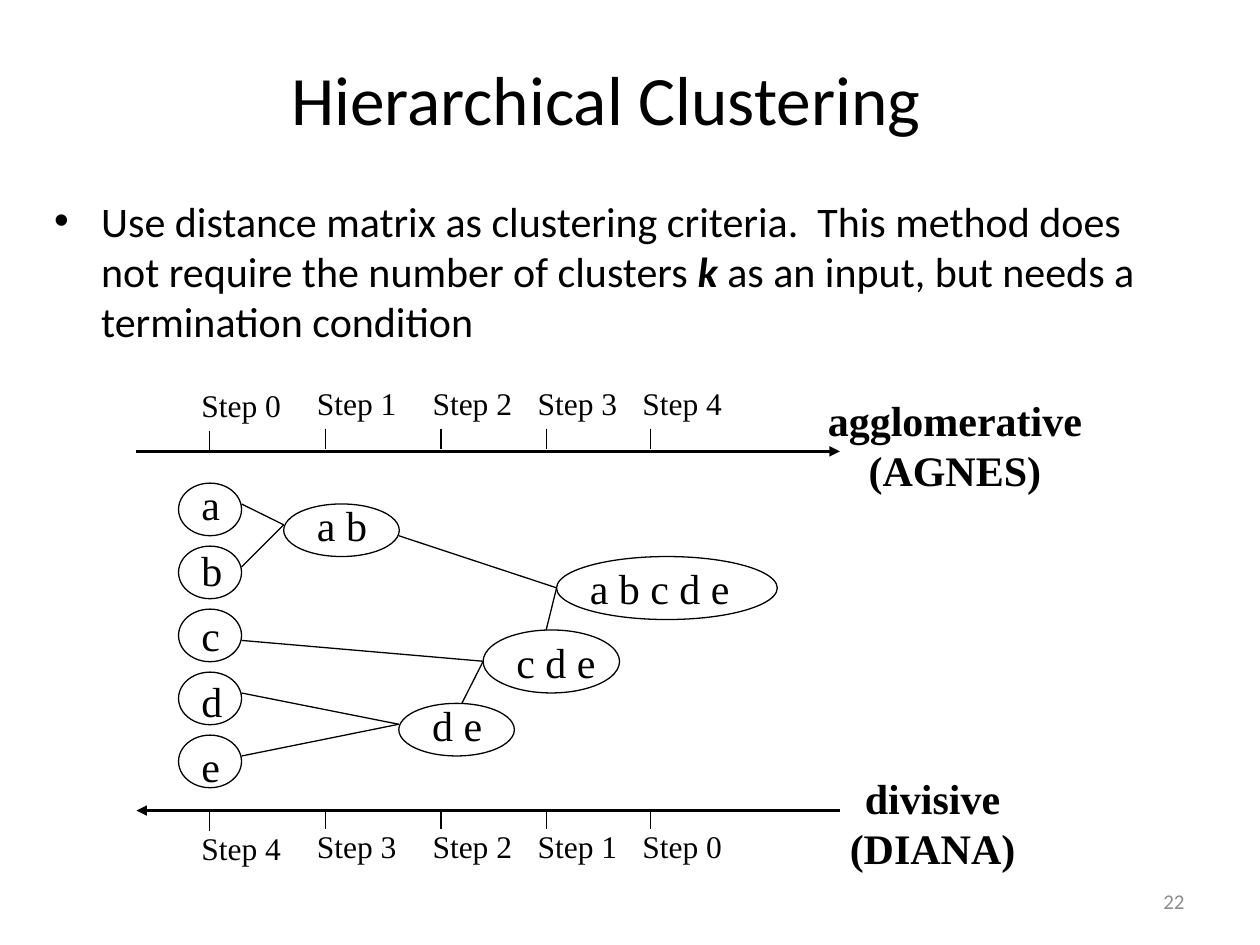
from lxml import etree
from pptx import Presentation
from pptx import util as u
from pptx.dml.color import RGBColor
from pptx.enum import shapes, text
from pptx.oxml.ns import qn

COLORS = {"ink": "000000", "muted": "8C8C8C"}
SANS, SERIF = "Calibri", "Times New Roman"


class Deck:
    """Holds the style and the current slide; all lengths are in cm."""

    def __init__(self, width, height):
        self.prs = Presentation()
        self.prs.slide_width, self.prs.slide_height = u.Cm(width), u.Cm(height)
        self.s = self.prs.slides.add_slide(self.prs.slide_layouts[6])

    def text(self, x, y, w, h, paras, size, font=SERIF, color="ink", bold=False,
             align="LEFT", anchor="TOP", wrap=True, bullet=False):
        """paras is a list of paragraphs, each a list of (text, emphasised) runs."""
        sp = self.s.shapes.add_textbox(u.Cm(x), u.Cm(y), u.Cm(w), u.Cm(h))
        tf = sp.text_frame
        tf.word_wrap = wrap
        tf.vertical_anchor = getattr(text.MSO_ANCHOR, anchor)
        for i, runs in enumerate(paras):
            p = tf.add_paragraph() if i else tf.paragraphs[0]
            p.alignment = getattr(text.PP_ALIGN, align)
            for words, strong in runs:
                r = p.add_run()
                r.text = words
                r.font.name, r.font.size = font, u.Pt(size)
                r.font.bold, r.font.italic = bold or strong, strong
                r.font.color.rgb = RGBColor.from_string(COLORS[color])
            if bullet:
                pPr = p._p.get_or_add_pPr()
                pPr.set("marL", str(u.Cm(0.95)))
                pPr.set("indent", str(u.Cm(-0.95)))
                etree.SubElement(pPr, qn("a:buFont"), typeface="Arial")
                etree.SubElement(pPr, qn("a:buChar"), char="•")

    def line(self, x1, y1, x2, y2, width=0.75, arrow=False):
        c = self.s.shapes.add_connector(shapes.MSO_CONNECTOR.STRAIGHT,
                                        u.Cm(x1), u.Cm(y1), u.Cm(x2), u.Cm(y2))
        c.line.width = u.Pt(width)
        c.line.color.rgb = RGBColor.from_string(COLORS["ink"])
        if arrow:
            etree.SubElement(c.line._get_or_add_ln(), qn("a:tailEnd"), type="triangle")
        etree.SubElement(c._element.spPr, qn("a:effectLst"))

    def ellipse(self, x, y, w, h):
        sp = self.s.shapes.add_shape(shapes.MSO_SHAPE.OVAL,
                                     u.Cm(x), u.Cm(y), u.Cm(w), u.Cm(h))
        sp.shadow.inherit = False
        sp.fill.background()
        sp.line.width = u.Pt(0.75)
        sp.line.color.rgb = RGBColor.from_string(COLORS["ink"])

    def axis(self, start, end, y, tick_y, label_y, steps):
        """Draws an arrow with one tick and label per step."""
        self.line(start, y, end, y, 1.5, arrow=True)
        for i, (x, step) in enumerate(zip((4.23, 6.56, 8.89, 11.01, 13.12), steps)):
            drop = 0 if i else 0.04  # the first step sits slightly lower
            self.line(x, tick_y + drop, x, tick_y + 0.42 + drop)
            self.text(x - 0.42, label_y + drop, 2.12, 1.02,
                      [[(f"Step {step}", False)]], 18)

    def cluster(self, name, x, y, w, h, label_dx, label_y, label_w):
        self.text(x + label_dx, label_y, label_w, 1.27, [[(name, False)]], 24, wrap=False)
        self.ellipse(x, y, w, h)

    def caption(self, x, y, w, lines):
        self.text(x, y, w, 2.29, [[(t, False)] for t in lines], 24,
                  bold=True, align="CENTER", wrap=False)


def main():
    d = Deck(25.4, 19.05)

    # Title, body and slide number
    d.text(2.08, 1.37, 20.27, 1.22, [[("Hierarchical Clustering", False)]], 39.6, SANS,
           align="CENTER", anchor="MIDDLE")
    d.text(0.84, 3.81, 23.06, 3.38, [[
        ("Use distance matrix as clustering criteria.  This method does not require "
         "the number of clusters ", False),
        ("k", True),
        (" as an input, but needs a termination condition", False)]], 24, SANS, bullet=True)
    d.text(18.21, 17.65, 5.92, 1.02, [[("22", False)]], 12, SANS, "muted",
           align="RIGHT", anchor="MIDDLE")

    # Step axes, running in opposite directions
    d.axis(2.75, 16.93, 9.1, 8.64, 7.62, range(5))
    d.axis(16.93, 2.75, 16.34, 16.3, 16.55, range(4, -1, -1))

    # Single items
    for i, name in enumerate("abcde"):
        d.cluster(name, 3.6, 9.74 + 1.27 * i, 1.27, 1.06, 0.21, 9.53 + 1.32 * i,
                  0.93 if name in "bd" else 0.88)

    # Merged clusters
    for name, x, y, w, h, label_y, label_w in (
            ("a b", 5.72, 10.16, 2.33, 1.06, 9.95, 1.52),
            ("d e", 8.04, 14.18, 2.33, 1.06, 13.97, 1.52),
            ("c d e", 9.74, 12.7, 2.75, 1.27, 12.7, 2.11),
            ("a b c d e", 11.22, 11.22, 4.45, 1.27, 11.22, 3.33)):
        d.cluster(name, x, y, w, h, 0.42, label_y, label_w)

    # Links from each part to its merged cluster
    for target, sources in (
            ((5.72, 10.58), ((4.87, 10.16), (4.87, 11.43))),
            ((8.04, 14.6), ((4.87, 13.97), (4.87, 15.24))),
            ((9.74, 13.33), ((4.87, 12.91), (9.31, 14.18))),
            ((11.22, 11.85), ((8.04, 10.8), (11.01, 12.7)))):
        for source in sources:
            d.line(*source, *target)

    # Method names
    d.caption(16.43, 7.83, 5.64, ("agglomerative", "(AGNES)"))
    d.caption(16.87, 15.45, 3.86, ("divisive", "(DIANA)"))

    d.prs.save("out.pptx")


if __name__ == "__main__":
    main()
